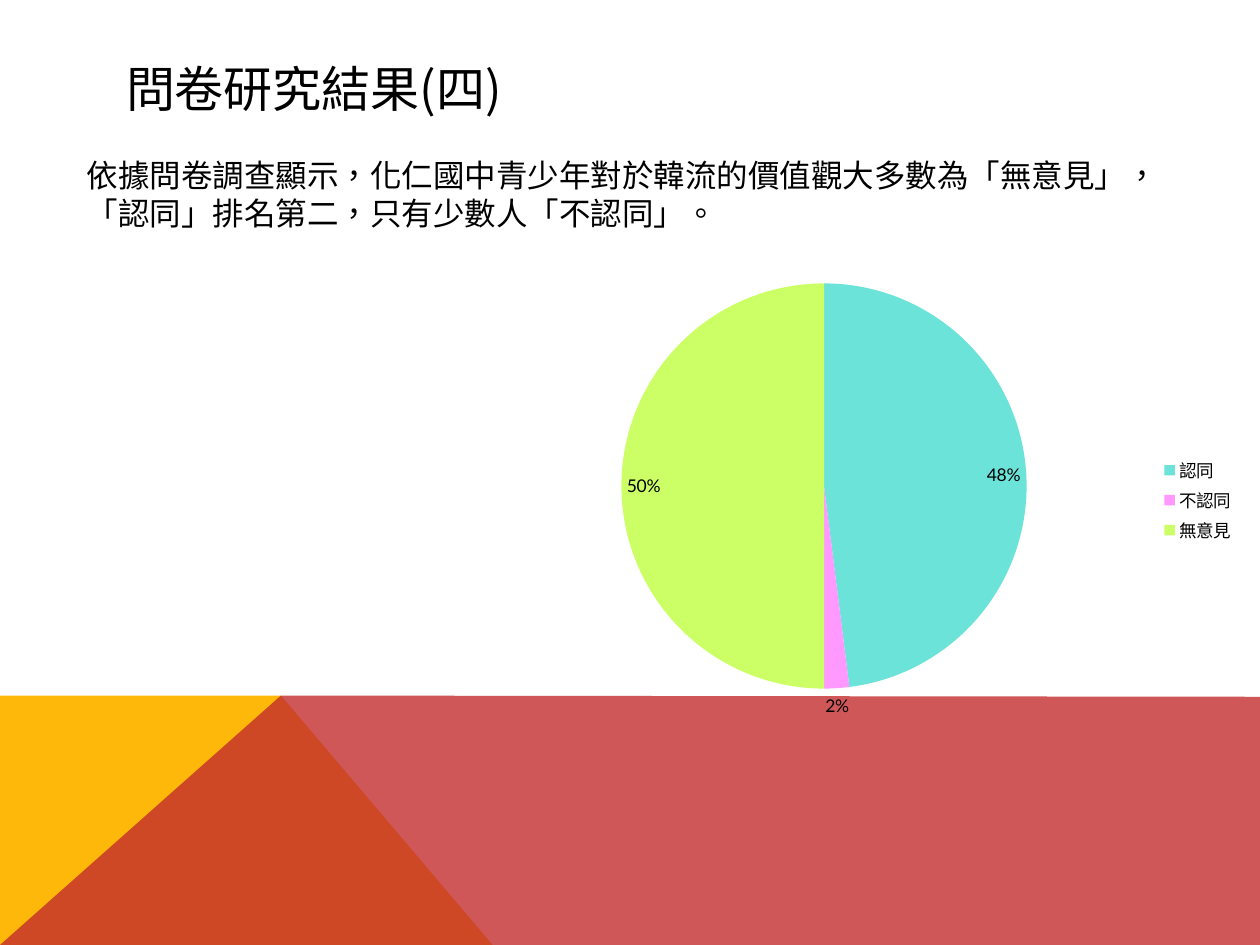
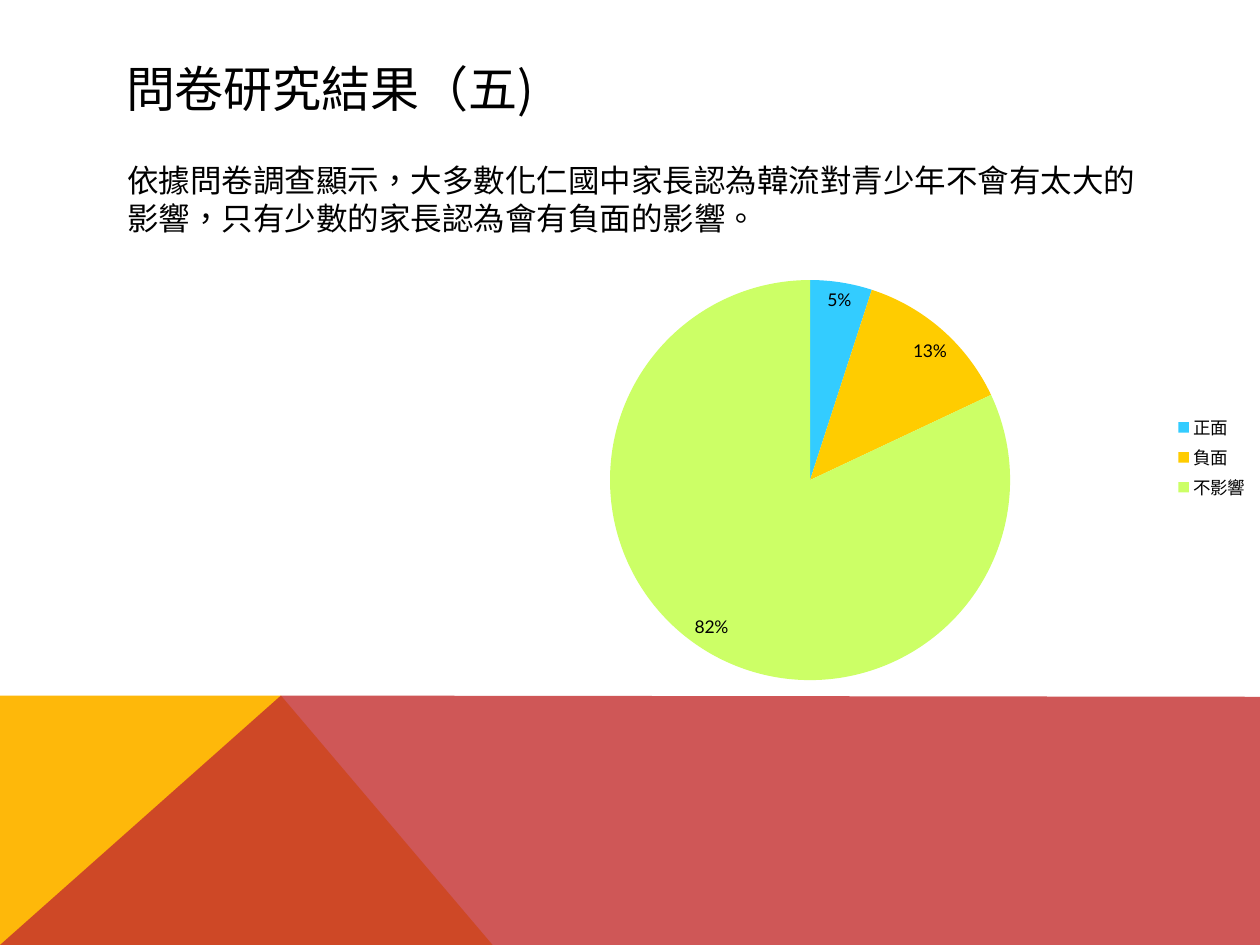
from pptx import Presentation
from pptx.chart.data import CategoryChartData
from pptx.dml.color import RGBColor
from pptx.enum import chart as ch, text
from pptx.oxml import parse_xml
from pptx.oxml.ns import nsdecls, qn
from pptx.util import Inches, Pt

BLACK = RGBColor(0x00, 0x00, 0x00)
WHITE = RGBColor(0xFF, 0xFF, 0xFF)
AMBER = RGBColor(0xFE, 0xB8, 0x0A)
BRICK = RGBColor(0xC3, 0x2D, 0x2E)
TURQUOISE = RGBColor(0x6B, 0xE3, 0xD8)
PINK = RGBColor(0xFF, 0x99, 0xFF)
LIME = RGBColor(0xCC, 0xFF, 0x66)
SKY = RGBColor(0x33, 0xCC, 0xFF)
GOLD = RGBColor(0xFF, 0xCC, 0x00)
CJK_FONT, CHART_FONT = "Noto Sans CJK SC", "Lato"

# Bands at the foot: colour, opacity in percent, corner points
BANDS = [
    (AMBER, 100, [(0, 7.5), (0, 5.52), (2.23, 5.52), (3.91, 7.5)]),
    (BRICK, 80, [(0, 7.5), (2.23, 5.52), (10, 5.53), (10, 7.5)]),
]

# Boxes are left, top, width, height; plot areas are fractions of the chart
RESULTS = [
    dict(
        title="問卷研究結果(四)",
        finding="依據問卷調查顯示，化仁國中青少年對於韓流的價值觀大多數為「無意見」，"
                "「認同」排名第二，只有少數人「不認同」。",
        finding_box=(0.59, 1.19, 8.58, 0.71),
        pie_box=(3.9, 2.1, 6, 3.74),
        plot=(0.17, 0.04, 0.54, 0.86),
        answers=[("認同", 48, TURQUOISE), ("不認同", 2, PINK), ("無意見", 50, LIME)],
    ),
    dict(
        title="問卷研究結果（五)",
        finding="依據問卷調查顯示，大多數化仁國中家長認為韓流對青少年不會有太大的影響，"
                "只有少數的家長認為會有負面的影響。",
        finding_box=(0.91, 1.23, 8.35, 0.71),
        pie_box=(3.5, 1.62, 6.51, 4.02),
        plot=(0.09, 0.15, 0.72, 0.79),
        answers=[("正面", 5, SKY), ("負面", 13, GOLD), ("不影響", 82, LIME)],
    ),
]


def write(frame, words, size):
    """Fill a text frame with one left-aligned paragraph of Chinese text."""
    frame.word_wrap = True
    frame.text = words
    paragraph = frame.paragraphs[0]
    paragraph.alignment = text.PP_ALIGN.LEFT
    paragraph.font.size = Pt(size)
    paragraph.font.name = CJK_FONT
    paragraph.font.color.rgb = BLACK
    defaults = paragraph._p.pPr.find(qn("a:defRPr"))
    defaults.set("lang", "zh-TW")
    defaults.append(parse_xml(f'<a:ea {nsdecls("a")} typeface="{CJK_FONT}"/>'))


prs = Presentation()
prs.slide_width, prs.slide_height = Inches(10), Inches(7.5)
layout = prs.slide_layouts.get_by_name("Title Only")
layout.background.fill.solid()
layout.background.fill.fore_color.rgb = WHITE
slides = [prs.slides.add_slide(layout) for _ in RESULTS]

# Shared bands, drawn once and moved to the layout
for colour, opacity, corners in BANDS:
    points = [(Inches(x), Inches(y)) for x, y in corners]
    outline = slides[0].shapes.build_freeform(*points[0])
    outline.add_line_segments(points[1:], close=True)
    band = outline.convert_to_shape()
    band.shadow.inherit = False
    band.line.fill.background()
    band.fill.solid()
    band.fill.fore_color.rgb = colour
    if opacity < 100:
        solid = band.element.spPr.find(qn("a:solidFill"))
        solid[0].append(parse_xml(f'<a:alpha {nsdecls("a")} val="{opacity * 1000}"/>'))
    layout.element.cSld.spTree.append(band.element)

for slide, result in zip(slides, RESULTS):
    # Title
    title = slide.shapes.title
    title.left, title.top, title.width, title.height = map(Inches, (0.9, 0.4, 8.22, 0.6))
    title.text_frame.vertical_anchor = text.MSO_ANCHOR.MIDDLE
    write(title.text_frame, result["title"], 28)

    # Finding
    finding = slide.shapes.add_textbox(*map(Inches, result["finding_box"]))
    write(finding.text_frame, result["finding"], 18)

    # Pie of answers
    names, shares, colours = zip(*result["answers"])
    data = CategoryChartData()
    data.categories = names
    data.add_series("Series 1", shares)
    pie = slide.shapes.add_chart(
        ch.XL_CHART_TYPE.PIE, *map(Inches, result["pie_box"]), data).chart
    pie.has_title = False
    pie.font.name, pie.font.size = CHART_FONT, Pt(10)
    pie.font.color.rgb = BLACK
    pie.has_legend = True
    pie.legend.position = ch.XL_LEGEND_POSITION.RIGHT
    pie.legend.include_in_layout = False

    plot = pie.plots[0]
    plot.vary_by_categories = True
    for index, colour in enumerate(colours):
        slice_fill = plot.series[0].points[index].format.fill
        slice_fill.solid()
        slice_fill.fore_color.rgb = colour
    plot.has_data_labels = True
    labels = plot.data_labels
    labels.show_percentage, labels.show_value = True, False
    labels.number_format, labels.number_format_is_linked = "0%", False
    labels.position = ch.XL_LABEL_POSITION.BEST_FIT

    # Fixed place of the pie inside the chart
    area = pie._chartSpace.chart.plotArea
    for old in area.findall(qn("c:layout")):
        area.remove(old)
    x, y, w, h = result["plot"]
    area.insert(0, parse_xml(
        f'<c:layout {nsdecls("c")}><c:manualLayout><c:layoutTarget val="inner"/>'
        '<c:xMode val="edge"/><c:yMode val="edge"/>'
        f'<c:x val="{x}"/><c:y val="{y}"/><c:w val="{w}"/><c:h val="{h}"/>'
        '</c:manualLayout></c:layout>'))

prs.save("out.pptx")
